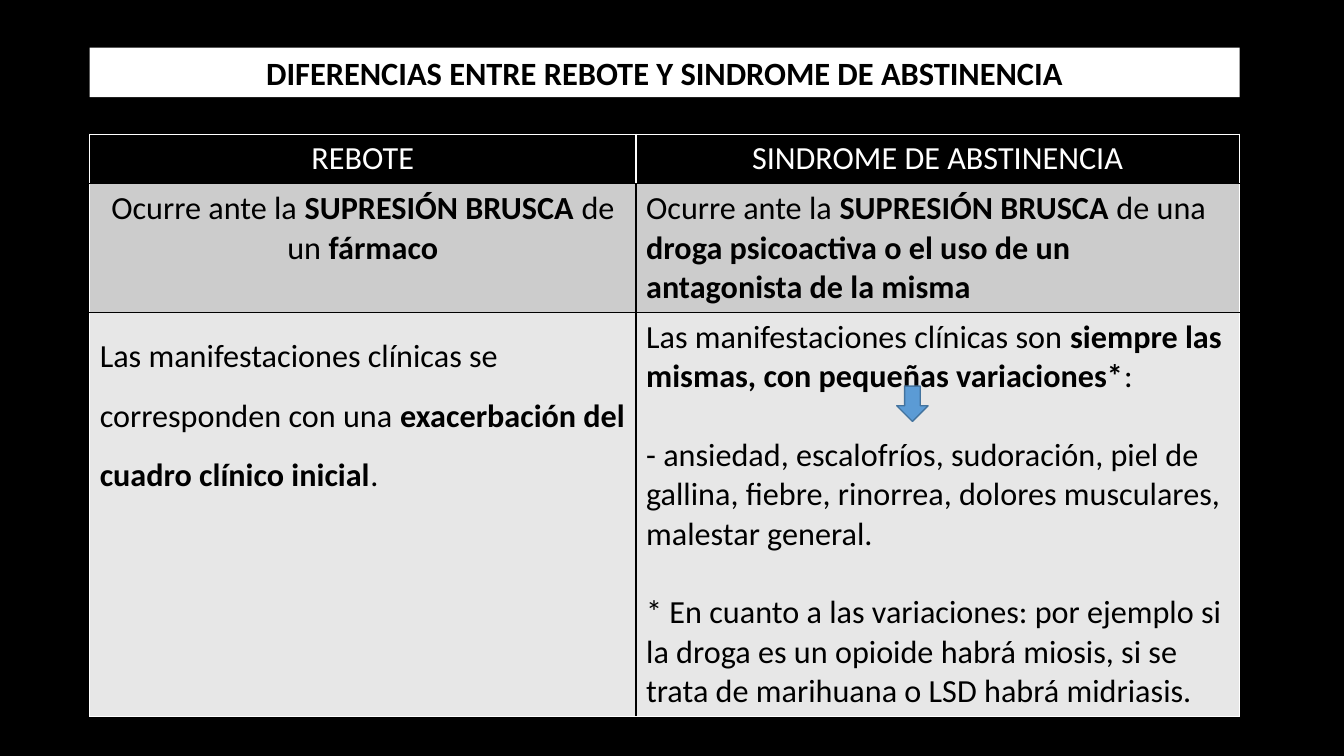
from lxml.etree import SubElement
from pptx import Presentation
from pptx.dml.color import RGBColor
from pptx.enum.shapes import MSO_SHAPE
from pptx.enum.text import MSO_ANCHOR, MSO_AUTO_SIZE, PP_ALIGN
from pptx.oxml.ns import qn
from pptx.util import Cm, Pt

BLACK, WHITE = "000000", "FFFFFF"
ROW_FILLS = [BLACK, "CCCCCC", "E7E7E7"]
LEFT, WIDTH = Cm(2.26), Cm(28.98)


def rgb(color):
    return RGBColor.from_string(color)


def add_runs(p, text, size, color, bold=False):
    """Add text as runs; each "|" switches bold on or off."""
    for i, part in enumerate(text.split("|")):
        if part:
            r = p.add_run()
            r.text = part
            r.font.name = "Calibri"
            r.font.size = Pt(size)
            r.font.bold = bold != (i % 2 == 1)
            r.font.color.rgb = rgb(color)


prs = Presentation()
prs.slide_width, prs.slide_height = Cm(33.87), Cm(19.05)
slide = prs.slides.add_slide(prs.slide_layouts[5])
slide.background.fill.solid()
slide.background.fill.fore_color.rgb = rgb(BLACK)

# Title
title = slide.shapes.title
title.left, title.top, title.width, title.height = LEFT, Cm(1.2), WIDTH, Cm(1.25)
title.fill.solid()
title.fill.fore_color.rgb = rgb(WHITE)
tf = title.text_frame
tf.word_wrap = True
tf.auto_size = MSO_AUTO_SIZE.NONE
tf.vertical_anchor = MSO_ANCHOR.MIDDLE
p = tf.paragraphs[0]
p.alignment = PP_ALIGN.CENTER
add_runs(p, "DIFERENCIAS ENTRE REBOTE Y SINDROME DE ABSTINENCIA", 23.2, BLACK, True)

# Comparison table: each cell is a list of paragraphs
rows = [
    [["REBOTE"], ["SINDROME DE ABSTINENCIA"]],
    [
        ["Ocurre ante la |SUPRESIÓN BRUSCA |de un |fármaco"],
        ["Ocurre ante la |SUPRESIÓN BRUSCA |de una |"
         "droga psicoactiva o el uso de un antagonista de la misma"],
    ],
    [
        ["Las manifestaciones clínicas se corresponden con una |"
         "exacerbación del cuadro clínico inicial|."],
        ["Las manifestaciones clínicas son |"
         "siempre las mismas, con pequeñas variaciones*|:",
         "- ansiedad, escalofríos, sudoración, piel de gallina, fiebre, "
         "rinorrea, dolores musculares, malestar general.",
         "* En cuanto a las variaciones: por ejemplo si la droga es un opioide "
         "habrá miosis, si se trata de marihuana o LSD habrá midriasis."],
    ],
]
table = slide.shapes.add_table(3, 2, LEFT, Cm(3.38), WIDTH, Cm(14.5)).table
for column, width in zip(table.columns, [13.77, 15.21]):
    column.width = Cm(width)
for row, height in zip(table.rows, [1.23, 3.2, 10.07]):
    row.height = Cm(height)

for i, row in enumerate(rows):
    header = i == 0
    for j, paragraphs in enumerate(row):
        cell = table.cell(i, j)
        white_sides = {
            "lnL": header or j == 0,
            "lnR": header or j == 1,
            "lnT": header,
            "lnB": i == 2,
        }
        tcPr = cell._tc.get_or_add_tcPr()
        for side, is_white in white_sides.items():
            ln = SubElement(tcPr, qn(f"a:{side}"), w=str(Pt(1)))
            line_fill = SubElement(ln, qn("a:solidFill"))
            SubElement(line_fill, qn("a:srgbClr"), val=WHITE if is_white else BLACK)
        cell.fill.solid()
        cell.fill.fore_color.rgb = rgb(ROW_FILLS[i])

        tf = cell.text_frame
        for k, text in enumerate(paragraphs):
            p = tf.add_paragraph() if k else tf.paragraphs[0]
            centered = header or (i, j) == (1, 0)
            p.alignment = PP_ALIGN.CENTER if centered else PP_ALIGN.LEFT
            if k:
                p.space_before = Pt(28)
            if (i, j) == (2, 0):
                p.line_spacing = 1.5
            add_runs(p, text, 23, WHITE if header else BLACK)

# Arrow from the statement to the list of symptoms
arrow = slide.shapes.add_shape(MSO_SHAPE.DOWN_ARROW, Cm(22.6), Cm(9.73), Cm(0.79), Cm(0.89))
arrow.shadow.inherit = False
arrow.fill.solid()
arrow.fill.fore_color.rgb = rgb("5B9BD5")
arrow.line.color.rgb = rgb("43739E")
arrow.line.width = Pt(1)

prs.save("out.pptx")
